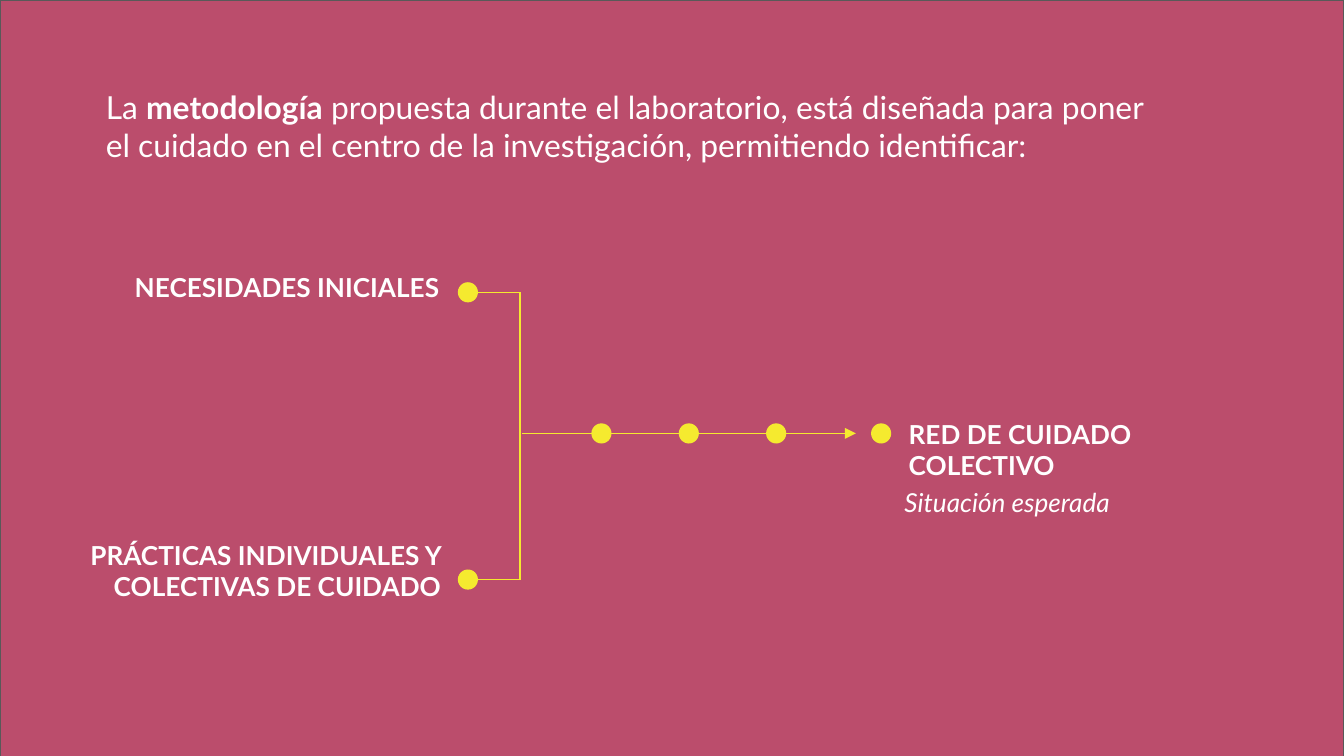
from dataclasses import dataclass

import lxml.etree
import pptx
import pptx.dml.color
import pptx.enum.shapes
import pptx.enum.text
import pptx.oxml.ns
import pptx.util

EMU_PER_PX = 5715
ALIGN = pptx.enum.text.PP_ALIGN
SHAPE = pptx.enum.shapes.MSO_SHAPE


@dataclass(frozen=True)
class Theme:
    rose: str = "BB4D6C"
    yellow: str = "F5EA2F"
    white: str = "FFFFFF"
    border: str = "595959"
    font: str = "Lato"
    intro_pt: int = 17
    label_pt: int = 14
    line_pt: float = 0.75


@dataclass(frozen=True)
class Box:
    left: int
    top: int
    width: int
    height: int


@dataclass(frozen=True)
class Run:
    text: str
    bold: bool = False
    italic: bool = False


@dataclass(frozen=True)
class Label:
    box: Box
    run: Run
    align: ALIGN = ALIGN.LEFT


@dataclass(frozen=True)
class Link:
    start: tuple[int, int]
    end: tuple[int, int]
    arrow: bool = False


THEME = Theme()
SLIDE_WIDTH, SLIDE_HEIGHT = 1600, 900
BACKDROP_HEIGHT = 915
INSET = 16
DOT_SIZE = 24
DOT_X, BRANCH_X, BRACKET_X = 545, 560, 619
NEEDS_Y, NETWORK_Y, PRACTICES_Y = 348, 516, 690
STEP_X, STEP_PITCH, STEP_COUNT = 704, 104, 3
ARROW_X, NETWORK_X = 1019, 1037

INTRO_BOX = Box(110, 88, 1275, 123)
INTRO = [
    Run("La "),
    Run("metodología", bold=True),
    Run(" propuesta durante el laboratorio, está diseñada para poner el cuidado "
        "en el centro de la investigación, permitiendo identificar:"),
]
LABELS = [
    Label(Box(37, 307, 502, 70), Run("NECESIDADES INICIALES", bold=True), ALIGN.RIGHT),
    Label(Box(80, 626, 461, 107),
          Run("PRÁCTICAS INDIVIDUALES Y COLECTIVAS DE CUIDADO", bold=True), ALIGN.RIGHT),
    Label(Box(1066, 482, 342, 107), Run("RED DE CUIDADO COLECTIVO", bold=True)),
    Label(Box(1061, 563, 298, 70), Run("Situación esperada", italic=True)),
]
LINKS = [
    Link((BRACKET_X, NEEDS_Y), (BRACKET_X, PRACTICES_Y)),
    Link((BRACKET_X, PRACTICES_Y), (BRANCH_X, PRACTICES_Y)),
    Link((BRACKET_X, NEEDS_Y), (BRANCH_X, NEEDS_Y)),
    Link((BRACKET_X + 2, NETWORK_Y), (ARROW_X, NETWORK_Y), arrow=True),
]
DOTS = [
    (DOT_X, NEEDS_Y),
    (DOT_X, PRACTICES_Y),
    *((STEP_X + step * STEP_PITCH, NETWORK_Y) for step in range(STEP_COUNT)),
    (NETWORK_X, NETWORK_Y),
]


def px(length: int) -> pptx.util.Emu:
    return pptx.util.Emu(length * EMU_PER_PX)


def rgb(color: str) -> pptx.dml.color.RGBColor:
    return pptx.dml.color.RGBColor.from_string(color)


def edges(box: Box) -> tuple:
    return px(box.left), px(box.top), px(box.width), px(box.height)


def apply(target, values: dict) -> None:
    for name, value in values.items():
        setattr(target, name, value)


def write(frame, runs: list[Run], size: int, align: ALIGN) -> None:
    apply(frame, {
        "word_wrap": True,
        "auto_size": pptx.enum.text.MSO_AUTO_SIZE.NONE,
        "vertical_anchor": pptx.enum.text.MSO_ANCHOR.TOP,
        "margin_left": px(INSET),
        "margin_top": px(INSET),
        "margin_right": px(INSET),
        "margin_bottom": px(INSET),
    })
    paragraph = frame.paragraphs[0]
    paragraph.alignment = align
    for part in runs:
        piece = paragraph.add_run()
        piece.text = part.text
        apply(piece.font, {
            "name": THEME.font,
            "size": pptx.util.Pt(size),
            "bold": part.bold,
            "italic": part.italic,
        })
        piece.font.color.rgb = rgb(THEME.white)


def draw_shape(slide, kind: SHAPE, box: Box, fill: str, border: str | None = None):
    shape = slide.shapes.add_shape(kind, *edges(box))
    shape.shadow.inherit = False
    shape.fill.solid()
    shape.fill.fore_color.rgb = rgb(fill)
    if border is None:
        shape.line.fill.background()
    else:
        shape.line.color.rgb = rgb(border)
        shape.line.width = pptx.util.Pt(THEME.line_pt)
    return shape


def draw_intro(slide) -> None:
    intro = slide.shapes.title
    apply(intro, dict(zip(("left", "top", "width", "height"), edges(INTRO_BOX))))
    write(intro.text_frame, INTRO, THEME.intro_pt, ALIGN.LEFT)


def draw_label(slide, label: Label) -> None:
    caption = slide.shapes.add_textbox(*edges(label.box))
    write(caption.text_frame, [label.run], THEME.label_pt, label.align)


def draw_link(slide, link: Link) -> None:
    connector = slide.shapes.add_connector(
        pptx.enum.shapes.MSO_CONNECTOR.STRAIGHT,
        *(px(value) for value in link.start + link.end))
    connector.line.color.rgb = rgb(THEME.yellow)
    connector.line.width = pptx.util.Pt(THEME.line_pt)
    properties = connector.element.spPr
    qn = pptx.oxml.ns.qn
    if link.arrow:
        lxml.etree.SubElement(properties.find(qn("a:ln")), qn("a:tailEnd"), type="triangle")
    lxml.etree.SubElement(properties, qn("a:effectLst"))


def draw_dot(slide, left: int, center: int) -> None:
    box = Box(left, center - DOT_SIZE // 2, DOT_SIZE, DOT_SIZE)
    draw_shape(slide, SHAPE.OVAL, box, THEME.yellow)


def main() -> None:
    deck = pptx.Presentation()
    apply(deck, {"slide_width": px(SLIDE_WIDTH), "slide_height": px(SLIDE_HEIGHT)})
    slide = deck.slides.add_slide(deck.slide_layouts.get_by_name("Title Only"))
    backdrop = draw_shape(slide, SHAPE.RECTANGLE, Box(0, 0, SLIDE_WIDTH, BACKDROP_HEIGHT),
                          THEME.rose, THEME.border)
    slide.shapes.title.element.addprevious(backdrop.element)
    draw_intro(slide)
    for label in LABELS:
        draw_label(slide, label)
    for link in LINKS:
        draw_link(slide, link)
    for left, center in DOTS:
        draw_dot(slide, left, center)
    deck.save("out.pptx")


if __name__ == "__main__":
    main()
